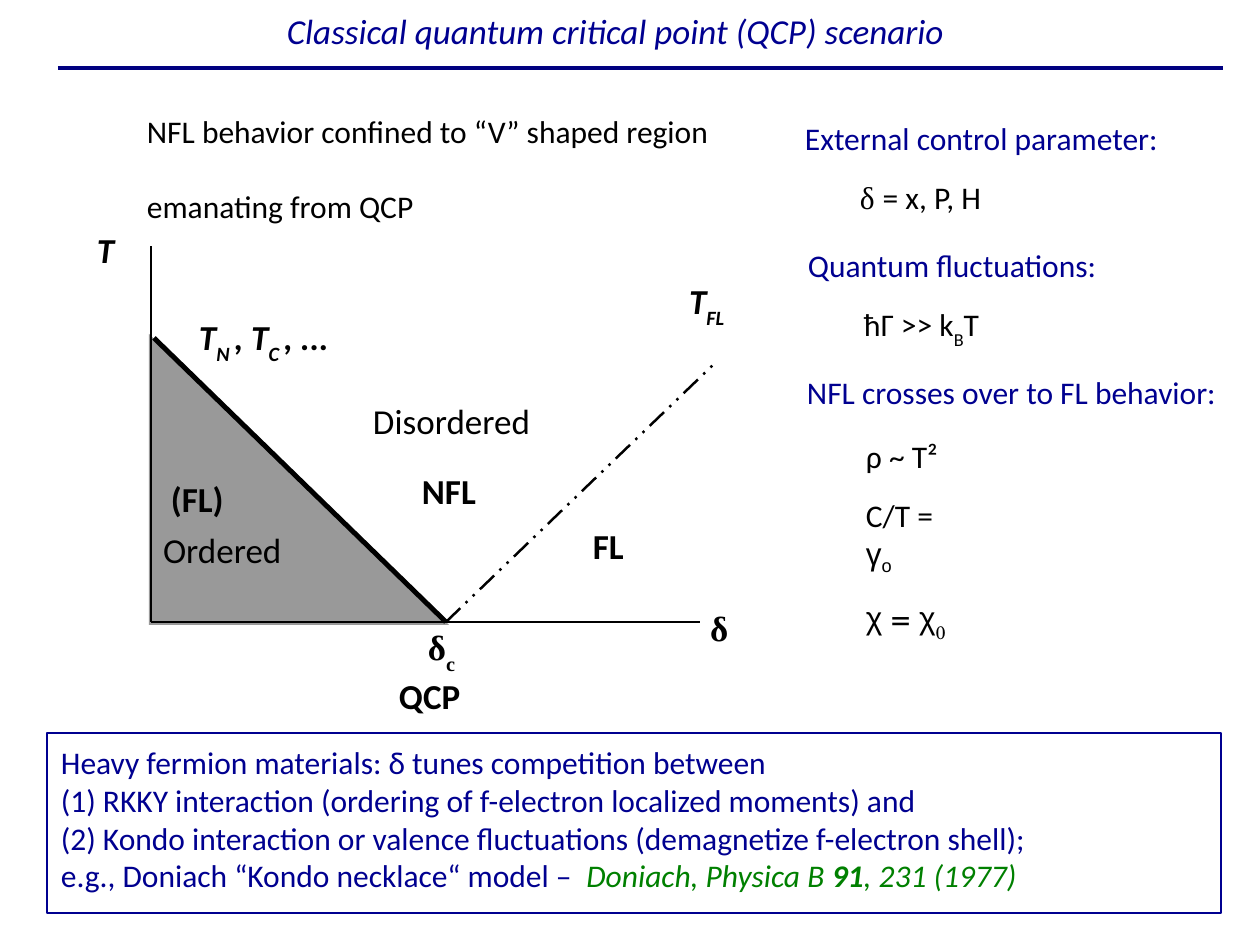
import dataclasses

import lxml.etree
import pptx
import pptx.dml.color
import pptx.enum.dml
import pptx.enum.shapes
import pptx.enum.text
import pptx.oxml.ns
import pptx.util

PX_PER_INCH = 126


@dataclasses.dataclass(frozen=True)
class Theme:
    navy: str = "000090"
    rule: str = "000080"
    black: str = "000000"
    green: str = "008000"
    grey: str = "999999"
    font: str = "Calibri"
    greek: str = "Times New Roman"
    symbol: str = "Arial"
    serif: str = "TeX Gyre Schola"
    large: int = 20
    body: int = 18


THEME = Theme()
SUB = {"baseline": -33000}


def px(length):
    return pptx.util.Emu(round(length * 914400 / PX_PER_INCH))


def rgb(value):
    return pptx.dml.color.RGBColor.from_string(value)


def add_run(paragraph, text, size, color, font=THEME.font, bold=False, italic=False, baseline=0):
    run = paragraph.add_run()
    run.text = text
    run.font.size = pptx.util.Pt(size)
    run.font.name = font
    run.font.bold = bold
    run.font.italic = italic
    run.font.color.rgb = rgb(color)
    if baseline:
        run._r.get_or_add_rPr().set("baseline", str(baseline))


def fill_text(text_frame, paragraphs, inset=(11, 8), wrap=False, after=0, before=0, **style):
    """Each paragraph is a dict with runs (text, overrides) and an optional indent."""
    text_frame.word_wrap = wrap
    text_frame.auto_size = pptx.enum.text.MSO_AUTO_SIZE.NONE
    text_frame.vertical_anchor = pptx.enum.text.MSO_ANCHOR.TOP
    text_frame.margin_left = text_frame.margin_right = px(inset[0])
    text_frame.margin_top, text_frame.margin_bottom = px(inset[1]), px(5)
    for index, content in enumerate(paragraphs):
        paragraph = text_frame.add_paragraph() if index else text_frame.paragraphs[0]
        paragraph.alignment = pptx.enum.text.PP_ALIGN.LEFT
        paragraph.space_after = pptx.util.Pt(after)
        paragraph.space_before = pptx.util.Pt(before if index else 0)
        if "indent" in content:
            properties = paragraph._p.get_or_add_pPr()
            properties.set("marL", str(px(content["indent"])))
            properties.set("indent", "0")
        for text, overrides in content["runs"]:
            if text == "\v":
                paragraph.add_line_break()
            else:
                add_run(paragraph, text, **{**style, **overrides})


def line_of(text, **overrides):
    return {"runs": [(text, overrides)]}


def add_text(slide, box, paragraphs, size=THEME.body, color=THEME.black, **options):
    shape = slide.shapes.add_textbox(*map(px, box))
    fill_text(shape.text_frame, paragraphs, size=size, color=color, **options)


def add_label(slide, box, runs, **options):
    add_text(slide, box, [{"runs": runs}], size=THEME.large, **options)


def add_line(slide, start, end, color, width, dash=None):
    line = slide.shapes.add_connector(
        pptx.enum.shapes.MSO_CONNECTOR.STRAIGHT, *map(px, start + end))
    line.line.color.rgb = rgb(color)
    line.line.width = pptx.util.Pt(width)
    if dash:
        line.line.dash_style = dash
    properties = line._element.spPr
    lxml.etree.SubElement(properties, pptx.oxml.ns.qn("a:effectLst"))


def add_block(slide, kind, box, fill=None, outline=None):
    shape = slide.shapes.add_shape(kind, *map(px, box))
    shape.shadow.inherit = False
    if fill:
        shape.fill.solid()
        shape.fill.fore_color.rgb = rgb(fill)
    else:
        shape.fill.background()
    if outline:
        shape.line.color.rgb = rgb(outline)
        shape.line.width = pptx.util.Pt(1.5)
    else:
        shape.line.fill.background()
    return shape


def add_title(slide):
    title = slide.shapes.title
    title.left, title.top, title.width, title.height = map(px, (169, 0, 893, 60))
    fill_text(title.text_frame, [line_of("Classical quantum critical point (QCP) scenario")],
              inset=(11, 9), size=THEME.large, color=THEME.navy, italic=True)
    title.text_frame.paragraphs[0].alignment = pptx.enum.text.PP_ALIGN.CENTER
    add_line(slide, (58, 68), (1223, 68), THEME.rule, 2.25)


def add_phase_diagram(slide):
    origin, critical = (151, 622), (446, 622)
    # Ordered region, phase boundary, axes and crossover line
    add_block(slide, pptx.enum.shapes.MSO_SHAPE.RIGHT_TRIANGLE, (149, 334, 300, 291), THEME.grey)
    add_line(slide, (154, 338), critical, THEME.black, 2.83)
    add_line(slide, origin, (700, 622), THEME.black, 1.42)
    add_line(slide, origin, (151, 246), THEME.black, 1.42)
    add_line(slide, critical, (713, 365), THEME.black, 1.42,
             pptx.enum.dml.MSO_LINE.DASH_DOT_DOT)

    # Axis labels
    add_label(slide, (697, 597, 43, 55), [("δ", {})], inset=(13, 9), bold=True, font=THEME.greek)
    add_label(slide, (84, 219, 47, 55), [("T", {})], inset=(13, 9), bold=True, italic=True)

    # Region labels
    add_label(slide, (152, 520, 142, 55), [("Ordered", {})])
    add_label(slide, (360, 393, 182, 55), [("Disordered", {})], inset=(13, 6))
    for text, box in (("FL", (582, 517, 66, 50)), ("NFL", (411, 462, 91, 50)),
                      ("QCP", (388, 667, 98, 50)), ("(FL)", (160, 470, 88, 50))):
        add_label(slide, box, [(text, {})], bold=True)

    # Temperature scales and critical value
    add_label(slide, (417, 617, 49, 58), [("δ", {}), ("c", SUB)], bold=True, font=THEME.greek)
    add_label(slide, (188, 307, 174, 58),
              [("T", {}), ("N ", SUB), (", T", {}), ("C ", SUB), (", ...", {})],
              bold=True, italic=True)
    add_label(slide, (678, 271, 69, 58), [("T", {}), ("FL", SUB)], bold=True, italic=True)


def add_notes_column(slide):
    navy = {"color": THEME.navy}
    add_text(slide, (794, 111, 401, 108), [
        line_of("External control parameter:", **navy),
        {"indent": 55, "runs": [("δ ", {"font": THEME.greek}), ("= x, P, H", {})]},
    ], after=12)
    add_text(slide, (794, 238, 319, 113), [
        line_of("Quantum fluctuations:", **navy),
        {"indent": 56, "runs": [("ħΓ >> k", {}), ("B", SUB), ("T", {})]},
    ], inset=(14, 8), after=12)
    add_text(slide, (794, 367, 436, 50), [line_of("NFL crosses over to FL behavior:", **navy)],
             inset=(13, 6))
    arial = {"font": THEME.symbol}
    serif = {"font": THEME.serif}
    add_text(slide, (853, 431, 126, 220), [
        line_of("ρ ~ T²"),
        {"runs": [("C/T = ", {}), ("\v", {}), ("γ", arial), ("ο", {**arial, "baseline": -25000})]},
        {"runs": [("χ", arial), (" = ", serif), ("χ", arial), ("0", {**serif, **SUB})]},
    ], inset=(13, 6), after=12)


def add_summary(slide):
    box = add_block(slide, pptx.enum.shapes.MSO_SHAPE.RECTANGLE, (47, 733, 1174, 180),
                    outline=THEME.navy)
    cited = {"color": THEME.green, "italic": True}
    fill_text(box.text_frame, [
        line_of("Heavy fermion materials: δ tunes competition between"),
        line_of("(1) RKKY interaction (ordering of f-electron localized moments) and"),
        line_of("(2) Kondo interaction or valence fluctuations (demagnetize f-electron shell);"),
        {"runs": [("e.g., Doniach “Kondo necklace“ model –  ", {}), ("Doniach, Physica B ", cited),
                  ("91", {**cited, "bold": True}), (", 231 (1977)", cited)]},
    ], inset=(14, 10), wrap=True, size=THEME.body, color=THEME.navy)


def main():
    presentation = pptx.Presentation()
    presentation.slide_width, presentation.slide_height = px(1260), px(945)
    slide = presentation.slides.add_slide(presentation.slide_layouts[5])
    add_title(slide)
    add_text(slide, (134, 106, 592, 130), [
        line_of("NFL behavior confined to “V” shaped region"),
        line_of("emanating from QCP"),
    ], inset=(13, 6), before=21)
    add_phase_diagram(slide)
    add_notes_column(slide)
    add_summary(slide)
    presentation.save("out.pptx")


if __name__ == "__main__":
    main()
